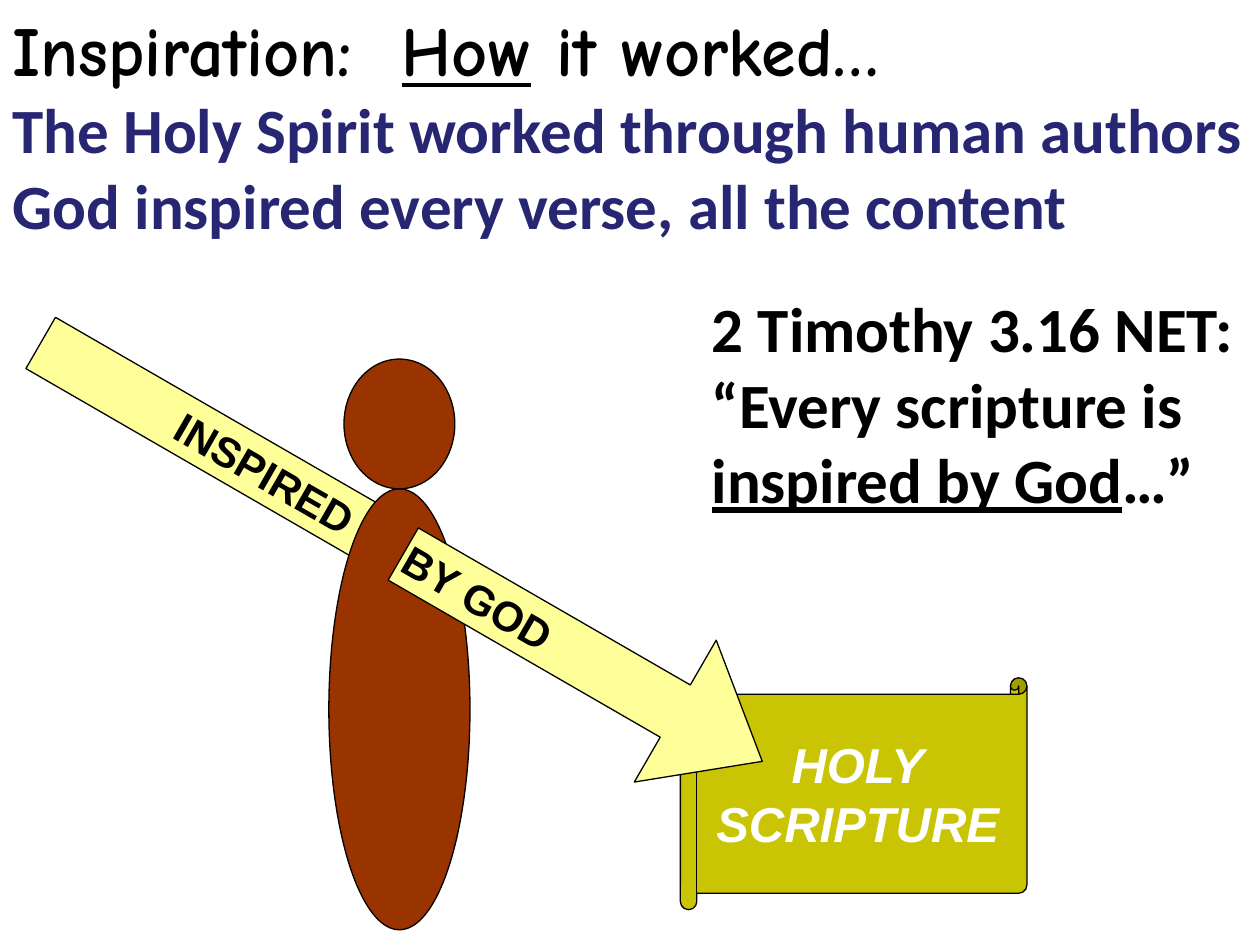
from pptx import Presentation, util as u
from pptx.dml.color import RGBColor
from pptx.enum import shapes, text
from pptx.oxml.xmlchemy import OxmlElement

WIDTH, HEIGHT = 10, 7.5
COLOURS = {"black": "000000", "white": "FFFFFF", "navy": "262673",
           "scroll": "CAC504", "ray": "FFFF99", "author": "993300"}
PLAIN, UNDERLINED = False, True
SHAPE = shapes.MSO_SHAPE
ALIGN = text.PP_ALIGN


class Page:
    """Slide with its style; areas are given as (left, top, width, height) on a one-inch grid."""

    def __init__(self, deck):
        self.slide = deck.slides.add_slide(deck.slide_layouts[1])
        self.drawing = self.slide.shapes.add_group_shape()

    def colour(self, name):
        return RGBColor.from_string(COLOURS[name])

    def place(self, item, area):
        item.left, item.top, item.width, item.height = map(u.Inches, area)

    def fill_text(self, frame, paras, font, size, colour, align=ALIGN.LEFT, italic=False,
                  bold=True, anchor=text.MSO_ANCHOR.TOP):
        """Each paragraph is a list of (words, underlined) spans."""
        frame.word_wrap = True
        frame.auto_size = text.MSO_AUTO_SIZE.NONE
        frame.vertical_anchor = anchor
        for index, spans in enumerate(paras):
            para = frame.add_paragraph() if index else frame.paragraphs[0]
            props = para._p.get_or_add_pPr()
            props.set("marL", "0")
            props.set("indent", "0")
            props.append(OxmlElement("a:buNone"))
            para.alignment = align
            para.space_before = u.Pt(0)
            para.font.name, para.font.size = font, u.Pt(size)
            para.font.bold, para.font.italic = bold, italic
            para.font.color.rgb = self.colour(colour)
            for words, underlined in spans:
                span = para.add_run()
                span.text = words
                if underlined:
                    span.font.underline = True

    def title(self, area, spans):
        box = self.slide.shapes.title
        self.place(box, area)
        self.fill_text(box.text_frame, [spans], "Comic Neue", 40, "black")

    def body(self, area, lines):
        box = self.slide.placeholders[1]
        self.place(box, area)
        self.fill_text(box.text_frame, [[(line, PLAIN)] for line in lines],
                       "Calibri", 36, "navy")

    def quote(self, area, spans):
        box = self.slide.shapes.add_textbox(*map(u.Inches, area))
        self.fill_text(box.text_frame, [spans], "Calibri", 36, "black")

    def shape(self, kind, area, fill, rotation=0, adjust=()):
        item = self.drawing.shapes.add_shape(kind, *map(u.Inches, area))
        item.shadow.inherit = False
        item.rotation = rotation
        for index, value in enumerate(adjust):
            item.adjustments[index] = value
        item.fill.solid()
        item.fill.fore_color.rgb = self.colour(fill)
        item.line.color.rgb = self.colour("black")
        item.line.width = u.Pt(0.75)
        return item

    def label(self, item, lines, size, colour, align=ALIGN.CENTER, italic=False, inset=0.1):
        item.text_frame.margin_left = u.Inches(inset)
        self.fill_text(item.text_frame, [[(line, PLAIN)] for line in lines], "Arial", size,
                       colour, align, italic, anchor=text.MSO_ANCHOR.MIDDLE)


def main():
    deck = Presentation()
    deck.slide_width, deck.slide_height = u.Inches(WIDTH), u.Inches(HEIGHT)
    page = Page(deck)

    # Heading and main points
    page.title((0, 0, WIDTH, 0.77),
               [("Inspiration:  ", PLAIN), ("How", UNDERLINED), (" it worked…", PLAIN)])
    page.body((0, 0.67, WIDTH, 1.32), ["The Holy Spirit worked through human authors",
                                       "God inspired every verse, all the content"])

    # Scroll that receives the message
    scroll = page.shape(SHAPE.HORIZONTAL_SCROLL, (5.4, 5.38, 2.75, 1.84), "scroll",
                        adjust=[0.071])
    page.label(scroll, ["HOLY", "SCRIPTURE"], 28, "white", italic=True)

    # Ray passing behind the author, then out in front as an arrow
    slope = 30
    ray = page.shape(SHAPE.RECTANGLE, (0.1, 3.32, 3.33, 0.47), "ray", slope)
    page.label(ray, ["INSPIRED"], 24, "black", inset=0.88)
    middle = 3.17
    for width, top, height in ((1.12, 3.88, 3.5), (0.88, 2.85, 1.03)):
        page.shape(SHAPE.OVAL, (middle - width / 2, top, width, height), "author")
    arrow = page.shape(SHAPE.RIGHT_ARROW, (2.98, 4.57, 3.29, 1.3), "ray", slope,
                       [0.368, 0.613])
    page.label(arrow, ["BY GOD"], 24, "black", ALIGN.LEFT, inset=0.03)

    # Supporting verse
    page.quote((5.55, 2.25, 4.45, 1.92),
               [("2 Timothy 3.16 NET: “Every scripture is ", PLAIN),
                ("inspired by God", UNDERLINED), ("…”", PLAIN)])

    deck.save("out.pptx")


if __name__ == "__main__":
    main()
